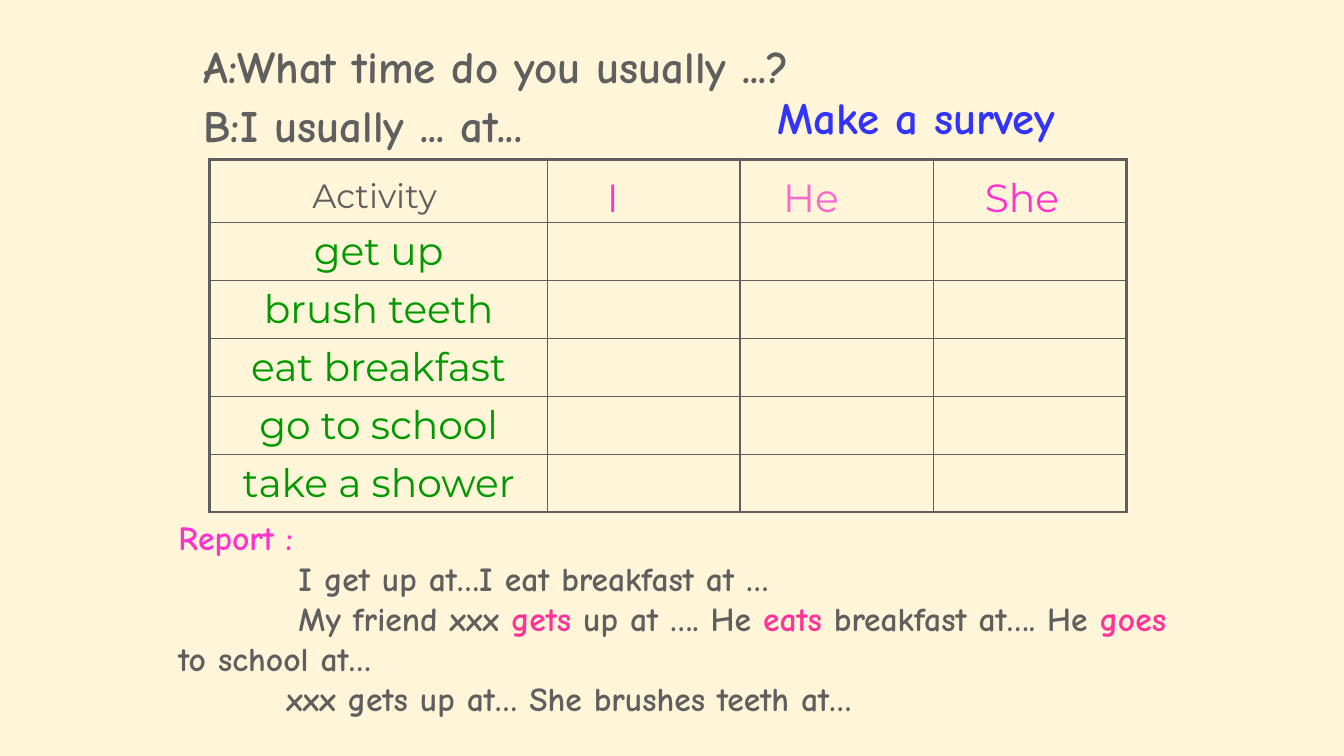
import pptx
import pptx.util
import pptx.dml.color
import pptx.enum.text
import pptx.oxml.ns
from lxml import etree

Inches, Pt = pptx.util.Inches, pptx.util.Pt
ALIGN = pptx.enum.text.PP_ALIGN
ANCHOR = pptx.enum.text.MSO_ANCHOR
HAND, SANS = "Comic Neue", "Montserrat"
GREY, PINK, ROSE, GREEN, BLUE = "5F5F5F", "FF33CC", "FF3399", "009900", "3333FF"

TITLE = "Make a survey"
DIALOGUE = [("A:What time do you usually ...?", (1.92, 0.33, 8.17, 0.68)),
            ("B:I usually ... at...", (1.92, 0.92, 6, 0.68))]
HEADINGS = [("Activity", (3, 1.69, 1.83, 0.57), 24, GREY),
            ("I", (5.92, 1.67, 0.5, 0.61), 28, PINK),
            ("He", (7.67, 1.67, 1, 0.61), 28, "FF66CC"),
            ("She", (9.67, 1.67, 1, 0.61), 28, PINK)]
ACTIVITIES = ["get up", "brush teeth", "eat breakfast", "go to school", "take a shower"]
COLUMNS = [3.35, 1.91, 1.92, 1.91]
HEADER_HEIGHT, ROW_HEIGHT = 0.63, 0.57
# First-line indent, then runs of text and colour
REPORT = [
    (0, [("Report :", PINK)]),
    (1.19, [("I get up at…I eat breakfast at …", GREY)]),
    (1.19, [("My friend xxx ", GREY), ("gets", ROSE), (" up at …. He", GREY),
            (" eats", ROSE), (" breakfast at…. He ", GREY), ("goes", ROSE),
            (" to school at…", GREY)]),
    (1.07, [("xxx gets up at… She brushes teeth at…", GREY)]),
]


def rgb(color):
    return pptx.dml.color.RGBColor.from_string(color)


def style(r, font, size, color, bold=False):
    r.font.name, r.font.size, r.font.bold = font, Pt(size), bold
    r.font.color.rgb = rgb(color)


def place(sp, box):
    sp.left, sp.top, sp.width, sp.height = map(Inches, box)
    tf = sp.text_frame
    tf.word_wrap = True
    tf.auto_size = pptx.enum.text.MSO_AUTO_SIZE.NONE
    tf.vertical_anchor = ANCHOR.TOP
    return tf


def write(sp, text, box, *look):
    tf = place(sp, box)
    tf.text = text
    p = tf.paragraphs[0]
    p.alignment = ALIGN.LEFT
    style(p.runs[0], *look)


def add_text(slide, text, box, *look):
    write(slide.shapes.add_textbox(0, 0, 0, 0), text, box, *look)


def set_borders(cell, widths):
    """Draw the left, right, top and bottom borders, with widths in points."""
    qn = pptx.oxml.ns.qn
    tcPr = cell._tc.get_or_add_tcPr()
    for i, (side, width) in enumerate(zip("LRTB", widths)):
        ln = etree.Element(qn(f"a:ln{side}"), w=str(Pt(width)))
        fill = etree.SubElement(ln, qn("a:solidFill"))
        etree.SubElement(fill, qn("a:srgbClr"), val=GREY)
        tcPr.insert(i, ln)


def add_survey(slide):
    heights = [HEADER_HEIGHT] + [ROW_HEIGHT] * len(ACTIVITIES)
    n_rows, n_cols = len(heights), len(COLUMNS)
    table = slide.shapes.add_table(n_rows, n_cols, Inches(2.08), Inches(1.58),
                                   Inches(sum(COLUMNS)), Inches(sum(heights))).table
    table.first_row = table.horz_banding = False
    for col, width in zip(table.columns, COLUMNS):
        col.width = Inches(width)
    for i, height in enumerate(heights):
        table.rows[i].height = Inches(height)
        for j in range(n_cols):
            cell = table.cell(i, j)
            cell.fill.background()
            outer = (j == 0, j == n_cols - 1, i == 0, i == n_rows - 1)
            set_borders(cell, [2.25 if edge else 1 for edge in outer])
    for i, activity in enumerate(ACTIVITIES, 1):
        cell = table.cell(i, 0)
        cell.text = activity
        p = cell.text_frame.paragraphs[0]
        p.alignment = ALIGN.CENTER
        style(p.runs[0], SANS, 28, GREEN)


def add_report(sp):
    tf = place(sp, (1.67, 5.08, 10, 2.13))
    for i, (indent, runs) in enumerate(REPORT):
        p = tf.add_paragraph() if i else tf.paragraphs[0]
        pPr = p._p.get_or_add_pPr()
        pPr.set("marL", "0")
        pPr.set("indent", str(Inches(indent)))
        etree.SubElement(pPr, pptx.oxml.ns.qn("a:buNone"))
        p.space_before = Pt(0)
        for text, color in runs:
            r = p.add_run()
            r.text = text
            style(r, HAND, 24, color, True)


def main():
    prs = pptx.Presentation()
    prs.slide_width, prs.slide_height = Inches(13.33), Inches(7.5)
    slide = prs.slides.add_slide(prs.slide_layouts[1])
    slide.background.fill.solid()
    slide.background.fill.fore_color.rgb = rgb("FFF5D8")
    write(slide.shapes.title, TITLE, (7.61, 0.84, 3.75, 0.68), HAND, 32, BLUE, True)
    add_report(slide.placeholders[1])
    add_survey(slide)
    for text, box, size, color in HEADINGS:
        add_text(slide, text, box, SANS, size, color)
    for text, box in DIALOGUE:
        add_text(slide, text, box, HAND, 32, GREY, True)
    prs.save("out.pptx")


if __name__ == "__main__":
    main()
